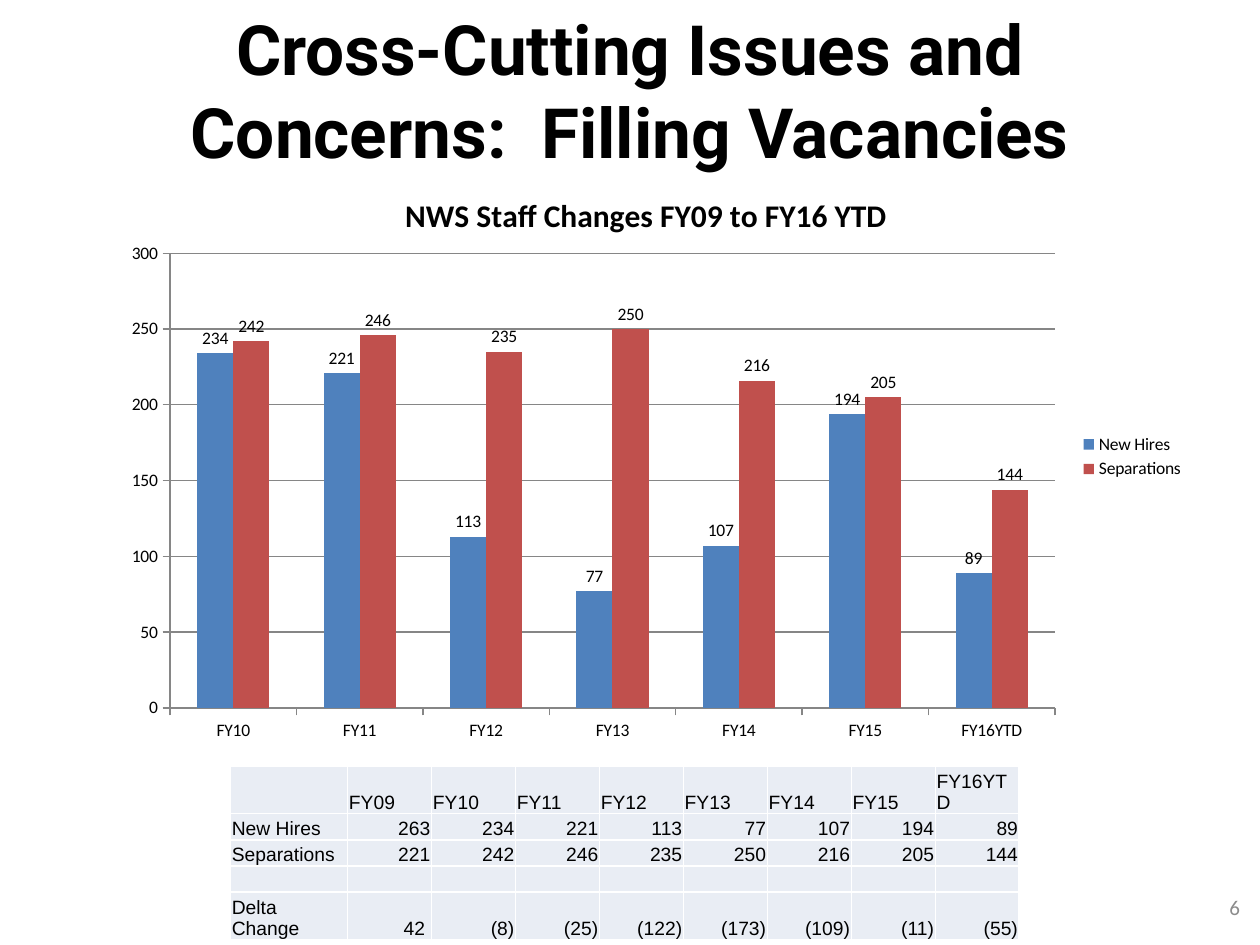
from lxml import etree
from pptx import Presentation
from pptx.chart.data import CategoryChartData
from pptx.dml.color import RGBColor
from pptx.enum.chart import XL_CHART_TYPE, XL_LABEL_POSITION, XL_LEGEND_POSITION, XL_TICK_MARK
from pptx.enum.text import MSO_ANCHOR, PP_ALIGN
from pptx.oxml import parse_xml
from pptx.oxml.ns import nsdecls, qn
from pptx.util import Inches, Pt

COLORS = {"ink": "000000", "page": "8C8C8C", "hires": "4F81BD", "leave": "C0504D",
          "grid": "868686", "cell": "E9EDF4", "edge": "FFFFFF"}
YEARS = ["FY09", "FY10", "FY11", "FY12", "FY13", "FY14", "FY15", "FY16YTD"]
HIRES = [263, 234, 221, 113, 77, 107, 194, 89]
LEAVES = [221, 242, 246, 235, 250, 216, 205, 144]
DELTA = ["42 ", "(8)", "(25)", "(122)", "(173)", "(109)", "(11)", "(55)"]


def color(name):
    return RGBColor.from_string(COLORS[name])


def style(font, size, face="Calibri", ink="ink", bold=False):
    font.size, font.name, font.bold = Pt(size), face, bold
    font.color.rgb = color(ink)


def write(frame, text, align=PP_ALIGN.LEFT, **look):
    para = frame.paragraphs[0]
    para.alignment = align
    run = para.add_run()
    run.text = text
    style(run.font, **look)


def add_text(slide, box, text, **look):
    frame = slide.shapes.add_textbox(*map(Inches, box)).text_frame
    frame.word_wrap = True
    frame.vertical_anchor = MSO_ANCHOR.MIDDLE
    write(frame, text, **look)


def set_layout(part, inner=False, **spots):
    """Give a chart part a fixed place, in fractions of the chart."""
    target = '<c:layoutTarget val="inner"/>' if inner else ""
    modes = "".join(f'<c:{key}Mode val="edge"/>' for key in "xy")
    sizes = "".join(f'<c:{key} val="{val}"/>' for key, val in spots.items())
    for old in part.findall(qn("c:layout")):
        part.remove(old)
    layout = parse_xml(f'<c:layout {nsdecls("c")}><c:manualLayout>{target}{modes}{sizes}'
                       '</c:manualLayout></c:layout>')
    text = part.find(qn("c:tx"))
    part.insert(0 if text is None else part.index(text) + 1, layout)


def add_bars(slide, box):
    data = CategoryChartData()
    data.categories = YEARS[1:]
    data.add_series("New Hires", HIRES[1:])
    data.add_series("Separations", LEAVES[1:])
    chart = slide.shapes.add_chart(
        XL_CHART_TYPE.COLUMN_CLUSTERED, *map(Inches, box), data).chart
    style(chart.font, 10)

    # Title and legend
    title = chart.chart_title
    write(title.text_frame, "NWS Staff Changes FY09 to FY16 YTD",
          align=PP_ALIGN.CENTER, size=18, bold=True)
    title.include_in_layout = True
    set_layout(title._element, x=0.27, y=0.05)
    chart.has_legend = True
    chart.legend.position = XL_LEGEND_POSITION.RIGHT
    chart.legend.include_in_layout = False

    # Axes
    rise = chart.value_axis
    rise.minimum_scale, rise.maximum_scale, rise.major_unit = 0, 300, 50
    rise.has_major_gridlines = True
    for axis in (rise, chart.category_axis):
        axis.major_tick_mark = XL_TICK_MARK.OUTSIDE
        axis.minor_tick_mark = XL_TICK_MARK.NONE
    for part in (rise, chart.category_axis, rise.major_gridlines):
        part.format.line.color.rgb = color("grid")
        part.format.line.width = Pt(0.75)

    # Bars and their values
    plot = chart.plots[0]
    plot.gap_width, plot.overlap, plot.vary_by_categories = 150, 0, False
    for series, name in zip(plot.series, ("hires", "leave")):
        series.format.fill.solid()
        series.format.fill.fore_color.rgb = color(name)
        labels = series.data_labels
        labels.show_value = True
        labels.position = XL_LABEL_POSITION.OUTSIDE_END
        style(labels.font, 10)
    area = chart._chartSpace.chart.plotArea
    set_layout(area, inner=True, x=0.06, y=0.16, w=0.81, h=0.76)


def add_edges(props):
    for side in "LRTB":
        line = etree.SubElement(props, qn(f"a:ln{side}"), w=str(Pt(1)))
        fill = etree.SubElement(line, qn("a:solidFill"))
        etree.SubElement(fill, qn("a:srgbClr"), val=COLORS["edge"])


def fill_cell(cell, text, align):
    add_edges(cell._tc.get_or_add_tcPr())
    cell.fill.solid()
    cell.fill.fore_color.rgb = color("cell")
    cell.margin_left = cell.margin_right = cell.margin_top = Inches(0.01)
    cell.margin_bottom = 0
    cell.vertical_anchor = MSO_ANCHOR.BOTTOM
    if text:
        write(cell.text_frame, text, align=align, size=11, face="Arial")
    else:
        # Keeps an empty row as low as the others
        para = cell.text_frame.paragraphs[0]._p
        etree.SubElement(para, qn("a:endParaRPr"), sz="1100")


def add_grid(slide, box):
    rows = [["", *YEARS], ["New Hires", *HIRES], ["Separations", *LEAVES],
            [""] * 9, ["Delta Change", *DELTA]]
    table = slide.shapes.add_table(len(rows), 9, *map(Inches, box)).table
    first = 0.93
    for index, col in enumerate(table.columns):
        col.width = Inches((box[2] - first) / 8 if index else first)
    for row in table.rows:
        row.height = Inches(box[3] / len(rows))
    for top, row in enumerate(rows):
        for left, value in enumerate(row):
            align = PP_ALIGN.RIGHT if top and left else PP_ALIGN.LEFT
            fill_cell(table.cell(top, left), str(value), align)


def main():
    deck = Presentation()
    deck.slide_width, deck.slide_height = Inches(10), Inches(7.5)
    slide = deck.slides.add_slide(deck.slide_layouts[6])
    add_text(slide, (0.5, 0.08, 9, 1.25),
             "Cross-Cutting Issues and Concerns:  Filling Vacancies",
             align=PP_ALIGN.CENTER, size=39.6, face="Roboto", bold=True)
    add_text(slide, (7.61, 7, 2.33, 0.4), "6",
             align=PP_ALIGN.RIGHT, size=12, ink="page")
    add_bars(slide, (0.83, 1.25, 8.67, 4.75))
    add_grid(slide, (1.83, 6.08, 6.26, 1.04))
    deck.save("out.pptx")


if __name__ == "__main__":
    main()
